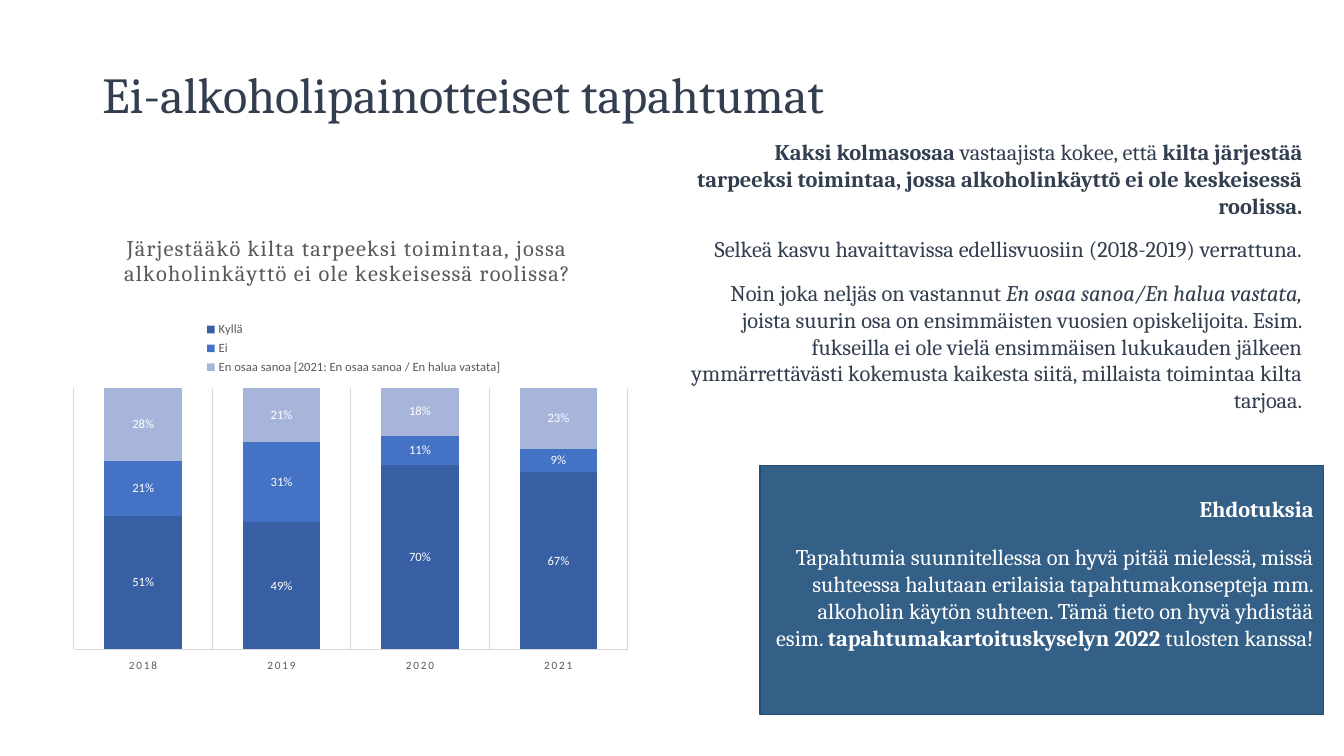
from lxml import etree
from pptx import Presentation
from pptx.chart.data import CategoryChartData
from pptx.dml.color import RGBColor
from pptx.enum.chart import XL_CHART_TYPE, XL_LABEL_POSITION, XL_LEGEND_POSITION, XL_TICK_LABEL_POSITION, XL_TICK_MARK
from pptx.enum.shapes import MSO_SHAPE
from pptx.enum.text import MSO_ANCHOR, PP_ALIGN
from pptx.oxml.ns import qn
from pptx.util import Pt

RIGHT = PP_ALIGN.RIGHT
MIDDLE = MSO_ANCHOR.MIDDLE
STACKED = XL_CHART_TYPE.COLUMN_STACKED_100
CENTER_LABEL = XL_LABEL_POSITION.CENTER
LEGEND_TOP = XL_LEGEND_POSITION.TOP
LABELS_LOW = XL_TICK_LABEL_POSITION.LOW
NO_TICK = XL_TICK_MARK.NONE
RECTANGLE = MSO_SHAPE.RECTANGLE

NAVY, BLUE, WHITE, GREY, RULE = "333F50", "1F4E79", "FFFFFF", "595959", "D9D9D9"
SERIF, SANS = "Cambria", "Calibri"


def style_font(font, name, size, color):
    font.name = name
    font.size = Pt(size)
    font.color.rgb = RGBColor.from_string(color)


def add_paragraphs(frame, paragraphs, color):
    """Each paragraph is a list of (text, bold, italic) runs."""
    frame.word_wrap = True
    for number, runs in enumerate(paragraphs):
        paragraph = frame.paragraphs[0] if number == 0 else frame.add_paragraph()
        paragraph.alignment = RIGHT
        paragraph.space_before = Pt(12 if number else 0)
        for text, bold, italic in runs:
            run = paragraph.add_run()
            run.text = text
            style_font(run.font, SERIF, 16, color)
            run.font.bold = bold
            run.font.italic = italic


prs = Presentation()
prs.slide_width, prs.slide_height = Pt(960), Pt(540)
slide = prs.slides.add_slide(prs.slide_layouts[5])

# Heading
heading = slide.shapes.title
heading.left, heading.top, heading.width, heading.height = Pt(66), Pt(28.75), Pt(828), Pt(82)
heading.text_frame.vertical_anchor = MIDDLE
heading_line = heading.text_frame.paragraphs[0]
heading_line.alignment = PP_ALIGN.LEFT
heading_line.line_spacing = 0.9
heading_run = heading_line.add_run()
heading_run.text = "Ei-alkoholipainotteiset tapahtumat"
style_font(heading_run.font, SERIF, 36, NAVY)

# Survey answers by year, shown oldest first through the reversed axis
answers = [
    ("Kyllä", (0.67, 0.70, 0.49, 0.51), "385FA3"),
    ("Ei", (0.09, 0.11, 0.31, 0.21), "4472C4"),
    ("En osaa sanoa [2021: En osaa sanoa / En halua vastata]", (0.23, 0.18, 0.21, 0.28), "A8B5DB"),
]
survey = CategoryChartData(number_format="0%")
survey.categories = ["2021", "2020", "2019", "2018"]
for answer, shares, _ in answers:
    survey.add_series(answer, shares)
chart = slide.shapes.add_chart(STACKED, Pt(44.6), Pt(150.5), Pt(412), Pt(333.4), survey).chart
style_font(chart.font, SANS, 10, "000000")

chart.has_title = True
question = chart.chart_title.text_frame.paragraphs[0].add_run()
question.text = "Järjestääkö kilta tarpeeksi toimintaa, jossa alkoholinkäyttö ei ole keskeisessä roolissa?"
style_font(question.font, SERIF, 16, GREY)
question.font.bold = False
question.font._element.set("spc", "100")

chart.has_legend = True
chart.legend.position = LEGEND_TOP
chart.legend.include_in_layout = False
style_font(chart.legend.font, SANS, 9, GREY)

bars = chart.plots[0]
bars.gap_width = 79
bars.overlap = 100
bars.vary_by_categories = False
for series, (_, _, color) in zip(bars.series, answers):
    series.format.fill.solid()
    series.format.fill.fore_color.rgb = RGBColor.from_string(color)
    labels = series.data_labels
    labels.show_value = True
    labels.number_format = "0%"
    labels.number_format_is_linked = False
    labels.position = CENTER_LABEL
    style_font(labels.font, SANS, 9, WHITE)

# Axes
years = chart.category_axis
years.reverse_order = True
years.major_tick_mark = NO_TICK
years.tick_label_position = LABELS_LOW
years.has_major_gridlines = True
for line in (years.format.line, years.major_gridlines.format.line):
    line.color.rgb = RGBColor.from_string(RULE)
    line.width = Pt(0.75)
style_font(years.tick_labels.font, SANS, 8, GREY)
years.tick_labels.font._element.set("spc", "120")
share_axis = chart.value_axis
share_axis.has_major_gridlines = False
share_axis.maximum_scale = 1
share_axis.minimum_scale = 0
share_axis.visible = False

# Chart part positions, as fractions of the chart area
placements = [
    ("c:title", 1, {"x": 0.1, "y": 0.04}),
    ("c:legend", 1, {"x": 0.24, "y": 0.23, "w": 0.53, "h": 0.13}),
    ("c:plotArea", 0, {"x": 0.02, "y": 0.38, "w": 0.96, "h": 0.56}),
]
for tag, index, fractions in placements:
    part = chart._chartSpace.find(".//" + qn(tag))
    layout = part.find(qn("c:layout"))
    if layout is None:
        layout = etree.Element(qn("c:layout"))
        part.insert(index, layout)
    manual = etree.SubElement(layout, qn("c:manualLayout"))
    if tag == "c:plotArea":
        etree.SubElement(manual, qn("c:layoutTarget")).set("val", "inner")
    for mode in ("c:xMode", "c:yMode"):
        etree.SubElement(manual, qn(mode)).set("val", "edge")
    for key, fraction in fractions.items():
        etree.SubElement(manual, qn("c:" + key)).set("val", str(fraction))

# Findings
findings = slide.shapes.add_textbox(Pt(480.2), Pt(95), Pt(457.2), Pt(225.4))
add_paragraphs(findings.text_frame, [
    [("Kaksi kolmasosaa ", True, False),
     ("vastaajista kokee, että", False, False),
     (" kilta järjestää tarpeeksi toimintaa, jossa alkoholinkäyttö ei ole keskeisessä roolissa.", True, False)],
    [("Selkeä kasvu havaittavissa edellisvuosiin (2018-2019) verrattuna.", False, False)],
    [("Noin joka neljäs on vastannut ", False, False),
     ("En osaa sanoa/En halua vastata, ", False, True),
     ("joista suurin osa on ensimmäisten vuosien opiskelijoita. Esim. fukseilla ei ole vielä "
      "ensimmäisen lukukauden jälkeen ymmärrettävästi kokemusta kaikesta siitä, millaista "
      "toimintaa kilta tarjoaa.", False, False)],
], NAVY)

# Suggestions
suggestions = slide.shapes.add_shape(RECTANGLE, Pt(542.9), Pt(332.6), Pt(402.5), Pt(177.8))
suggestions.shadow.inherit = False
suggestions.fill.solid()
suggestions.fill.fore_color.rgb = RGBColor.from_string(BLUE)
fill_color = suggestions._element.spPr.find(qn("a:solidFill"))[0]
etree.SubElement(fill_color, qn("a:alpha")).set("val", "90000")
suggestions.line.color.rgb = RGBColor.from_string(BLUE)
suggestions.line.width = Pt(1)
advice = suggestions.text_frame
advice.vertical_anchor = MIDDLE
advice.margin_bottom = Pt(28)
add_paragraphs(advice, [
    [("Ehdotuksia", True, False)],
    [("Tapahtumia suunnitellessa on hyvä pitää mielessä, missä suhteessa halutaan erilaisia "
      "tapahtumakonsepteja mm. alkoholin käytön suhteen. Tämä tieto on hyvä yhdistää esim. ", False, False),
     ("tapahtumakartoituskyselyn 2022 ", True, False),
     ("tulosten kanssa!", False, False)],
], WHITE)
advice.paragraphs[0].space_after = Pt(3)

prs.save("out.pptx")
